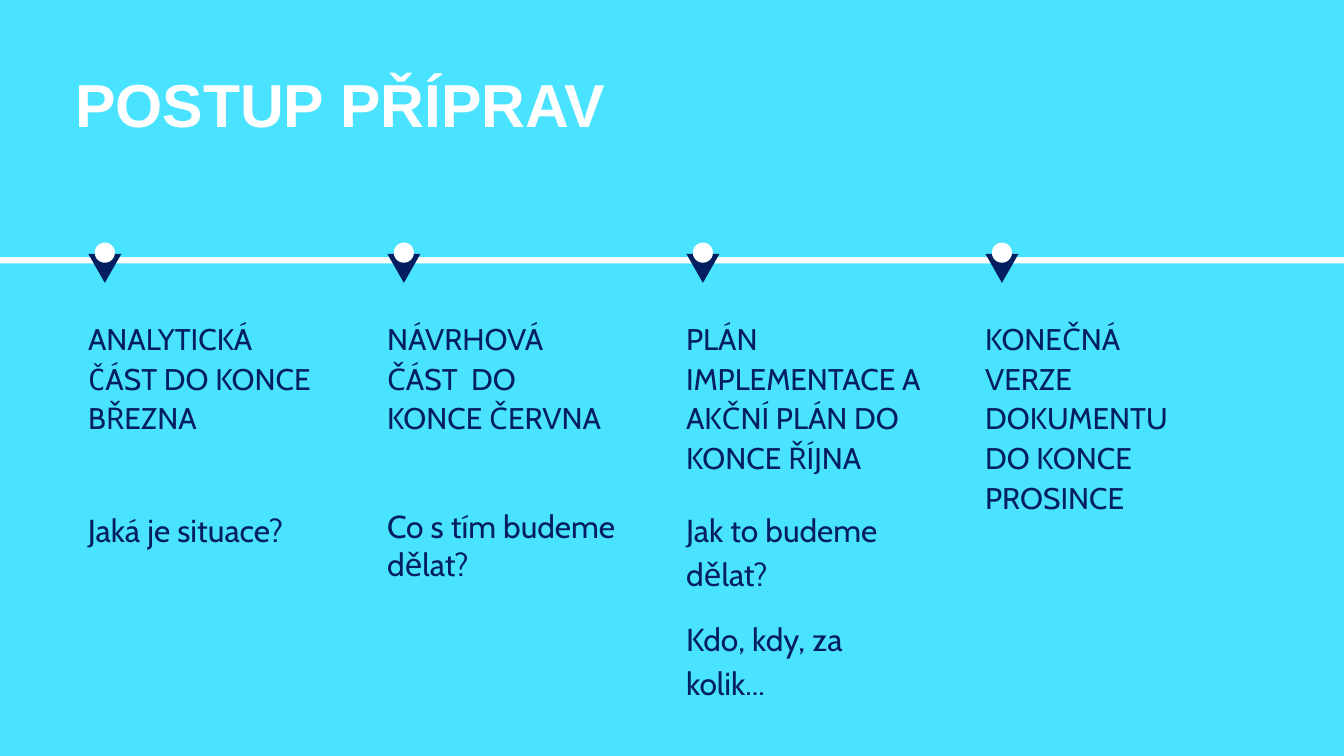
from pptx import Presentation
from pptx.dml.color import RGBColor
from pptx.enum.shapes import MSO_SHAPE as Shape
from pptx.enum.text import MSO_ANCHOR as Anchor, MSO_AUTO_SIZE as AutoSize, PP_ALIGN as Align
from pptx.util import Inches, Pt

COLORS = {"sky": "4AE3FF", "navy": "041F60", "white": "FFFFFF"}
WIDTH, HEIGHT = 20, 11.25
FIRST_COLUMN, COLUMN_PITCH = 1.3, 4.45
LINE_TOP, LOWER_BAND_TOP = 3.83, 3.92
STAGE_TOP = 4.7

STAGES = [
    (3.42, 1.76, [("ANALYTICKÁ ", "Cabin", 32), ("Č", "DejaVu Sans Mono", 31),
                  ("ÁST DO KONCE BŘEZNA", "Cabin", 32)]),
    (3.39, 1.76, [("NÁVRHOVÁ ČÁST  DO KONCE ČERVNA", "Cabin", 32)]),
    (4, 2.36, [("PLÁN IMPLEMENTACE A AKČNÍ PLÁN DO KONCE ŘÍJNA", "Cabin", 32)]),
    (3.36, 2.36, [("KONEČNÁ VERZE DOKUMENTU DO KONCE PROSINCE", "Cabin", 32)]),
]
QUESTIONS = [
    (0, 7.59, 3.64, 0.59, 1, "Jaká je situace?"),
    (1, 7.53, 4.06, 1.16, 1, "Co s tím budeme dělat?"),
    (2, 7.5, 3.55, 1.95, 1.16, "Jak to budeme dělat?"),
    (2, 9.12, 3.55, 1.95, 1.16, "Kdo, kdy, za kolik..."),
]


def column_left(column):
    return FIRST_COLUMN + column * COLUMN_PITCH


def add_filled(shapes, kind, box, color):
    filled = shapes.add_shape(kind, *map(Inches, box))
    filled.shadow.inherit = False
    filled.fill.solid()
    filled.fill.fore_color.rgb = RGBColor.from_string(COLORS[color])
    filled.line.fill.background()


def add_marker(shapes, column):
    center = column_left(column) + 0.26
    add_filled(shapes, Shape.FLOWCHART_MERGE, (center - 0.245, 3.78, 0.49, 0.43), "navy")
    add_filled(shapes, Shape.OVAL, (center - 0.15, 3.61, 0.3, 0.3), "white")


def write(frame, runs, color, line_spacing=1, space_before=1, bold=False):
    frame.word_wrap = True
    frame.auto_size = AutoSize.SHAPE_TO_FIT_TEXT
    frame.vertical_anchor = Anchor.TOP
    frame.margin_left = frame.margin_top = Inches(0.01)
    frame.margin_right = frame.margin_bottom = 0
    paragraph = frame.paragraphs[0]
    paragraph.alignment = Align.LEFT
    paragraph.line_spacing = line_spacing
    paragraph.space_before = Pt(space_before)
    for text, font_name, size in runs:
        run = paragraph.add_run()
        run.text = text
        run.font.name = font_name
        run.font.size = Pt(size)
        run.font.bold = bold
        run.font.color.rgb = RGBColor.from_string(COLORS[color])


def add_label(shapes, box, runs, line_spacing, space_before):
    label = shapes.add_textbox(*map(Inches, box))
    write(label.text_frame, runs, "navy", line_spacing, space_before)


def add_title(shapes):
    title = shapes.title
    title.left, title.top, title.width, title.height = map(Inches, (1.11, 0.98, 8.27, 1.11))
    write(title.text_frame, [("POSTUP PŘÍPRAV", "Arial", 65)], "white", bold=True)


def add_timeline(shapes):
    timeline = shapes.add_group_shape().shapes
    add_filled(timeline, Shape.RECTANGLE, (0, LINE_TOP, WIDTH, 0.04), "white")
    for column in range(len(STAGES)):
        add_marker(timeline, column)


def main():
    deck = Presentation()
    deck.slide_width, deck.slide_height = Inches(WIDTH), Inches(HEIGHT)
    shapes = deck.slides.add_slide(deck.slide_layouts[5]).shapes

    add_filled(shapes, Shape.RECTANGLE, (0, 0, WIDTH, LINE_TOP), "sky")
    add_filled(shapes, Shape.RECTANGLE,
               (0, LOWER_BAND_TOP, WIDTH, HEIGHT - LOWER_BAND_TOP), "sky")
    add_title(shapes)
    add_timeline(shapes)
    for column, (width, height, runs) in enumerate(STAGES):
        add_label(shapes, (column_left(column), STAGE_TOP, width, height), runs, 1.11, 0.9)
    for column, top, width, height, line_spacing, question in QUESTIONS:
        add_label(shapes, (column_left(column), top, width, height),
                  [(question, "Cabin", 34)], line_spacing, 1)

    # z-order: the title placeholder sits first in the tree, so lift it above the bands
    title_element = shapes.title.element
    title_element.getparent().append(title_element)
    deck.save("out.pptx")


if __name__ == "__main__":
    main()
